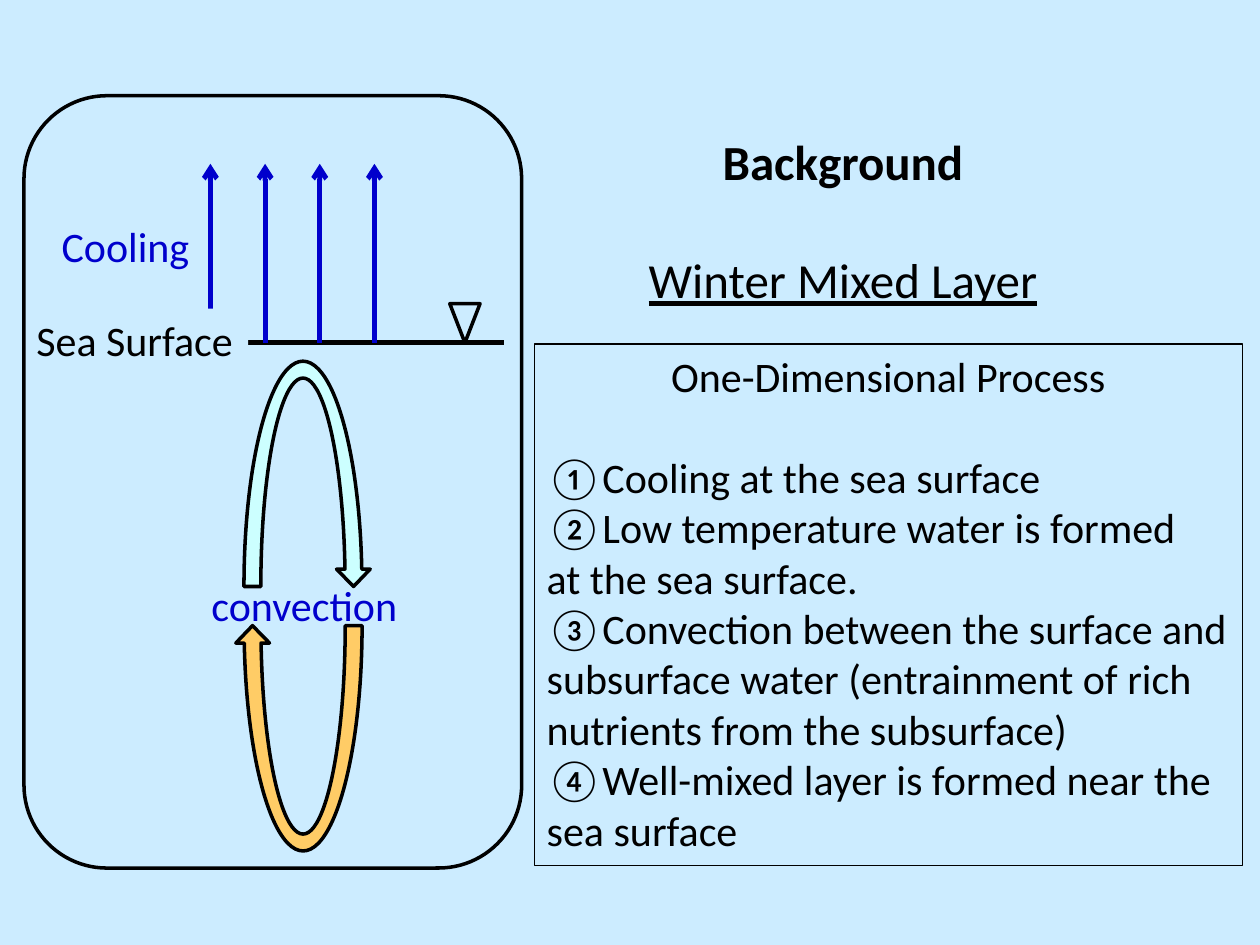
from lxml import etree
from pptx import Presentation
from pptx.dml.color import RGBColor
from pptx.enum import shapes, text
from pptx.oxml import ns
from pptx.util import Inches, Pt

FONT = "Calibri"
BLACK = RGBColor(0x00, 0x00, 0x00)
BLUE = RGBColor(0x00, 0x00, 0xCC)
SKY = RGBColor(0xCC, 0xEC, 0xFF)
CYAN = RGBColor(0xCC, 0xFF, 0xFF)
ORANGE = RGBColor(0xFF, 0xCC, 0x66)

STEPS = [
    "①Cooling at the sea surface",
    "②Low temperature water is formed",
    "at the sea surface.",
    "③Convection between the surface and",
    "subsurface water (entrainment of rich",
    "nutrients from the subsurface)",
    "④Well-mixed layer is formed near the",
    "sea surface",
]


def inches(*lengths):
    return [Inches(length) for length in lengths]


def write_paragraphs(frame, lines, align=text.PP_ALIGN.LEFT, **font_format):
    frame.word_wrap = False
    frame.auto_size = text.MSO_AUTO_SIZE.NONE
    frame.vertical_anchor = text.MSO_ANCHOR.TOP
    frame.text = "\n".join(lines)
    values = {"name": FONT, "size": Pt(24), "bold": False} | font_format
    color = values.pop("color", BLACK)
    for paragraph in frame.paragraphs:
        paragraph.alignment = align
        paragraph.font.color.rgb = color
        for name, value in values.items():
            setattr(paragraph.font, name, value)


def add_label(slide, box, label, color=BLACK):
    shape = slide.shapes.add_textbox(*inches(*box))
    write_paragraphs(shape.text_frame, [label], color=color)
    return shape


def add_outlined(slide, kind, box, fill=None, rotation=0, width=2):
    shape = slide.shapes.add_shape(kind, *inches(*box))
    shape.shadow.inherit = False
    shape.rotation = rotation
    shape.line.color.rgb = BLACK
    shape.line.width = Pt(width)
    if fill is None:
        shape.fill.background()
    else:
        shape.fill.solid()
        shape.fill.fore_color.rgb = fill
    return shape


def add_line(slide, start, end, color, width, arrow=False):
    line = slide.shapes.add_connector(
        shapes.MSO_CONNECTOR.STRAIGHT, *inches(*start, *end))
    line.line.color.rgb = color
    line.line.width = Pt(width)
    if arrow:
        etree.SubElement(line.line._get_or_add_ln(), ns.qn("a:tailEnd"), type="arrow")
    etree.SubElement(line._element.spPr, ns.qn("a:effectLst"))


def format_title(slide, left, top, width, height):
    title = slide.shapes.title
    title.left, title.top, title.width, title.height = inches(left, top, width, height)
    write_paragraphs(title.text_frame, ["Background", "Winter Mixed Layer"],
                     text.PP_ALIGN.CENTER, size=Pt(28))
    heading, subheading = title.text_frame.paragraphs
    heading.font.bold = True
    subheading.font.underline = True
    subheading.space_before = Pt(34)


def draw_convection(slide, left, top, width, height):
    """Draw cooling above the sea surface and the convection loop below it."""
    preset = shapes.MSO_SHAPE
    surface = top + 1.96
    add_line(slide, (left + 0.97, surface), (left + 3.81, surface), BLACK, 3)

    loop_left, loop_width, loop_height = left + 1.68, 1.07, 3.71
    for offset, fill, rotation in ((0.08, CYAN, 0), (0.39, ORANGE, 180)):
        add_outlined(slide, preset.CIRCULAR_ARROW,
                     (loop_left, surface + offset, loop_width, loop_height),
                     fill, rotation)

    add_outlined(slide, preset.ISOSCELES_TRIANGLE,
                 (left + 3.38, surface - 0.31, 0.24, 0.31), rotation=180)
    for index in range(4):
        x = left + 1.48 + index * 0.434
        add_line(slide, (x, surface), (x, surface - 1.42), BLUE, 2.75, arrow=True)

    sea_label = add_label(slide, (left, surface - 0.27, 1.78, 0.5), "Sea Surface")
    sea_label.fill.solid()
    sea_label.fill.fore_color.rgb = SKY
    add_label(slide, (left + 0.2, top + 0.94, 1.22, 0.5), "Cooling", BLUE)
    add_label(slide, (left + 1.39, top + 3.79, 1.69, 0.5), "convection", BLUE)
    add_outlined(slide, preset.ROUNDED_RECTANGLE, (left, top, width, height))


def add_process(slide, *box):
    panel = add_outlined(slide, shapes.MSO_SHAPE.RECTANGLE, box, width=0.75)
    write_paragraphs(panel.text_frame, ["One-Dimensional Process", *STEPS])
    heading, first_step = panel.text_frame.paragraphs[:2]
    heading.alignment = text.PP_ALIGN.CENTER
    first_step.space_before = Pt(29)


def main():
    presentation = Presentation()
    presentation.slide_width, presentation.slide_height = inches(10, 7.5)
    slide = presentation.slides.add_slide(presentation.slide_layouts.get_by_name("Title Only"))
    slide.background.fill.solid()
    slide.background.fill.fore_color.rgb = SKY
    format_title(slide, 5.03, 0.99, 3.32, 1.51)
    draw_convection(slide, 0.19, 0.76, 3.95, 6.13)
    add_process(slide, 4.24, 2.73, 5.62, 4.14)
    presentation.save("out.pptx")


if __name__ == "__main__":
    main()
